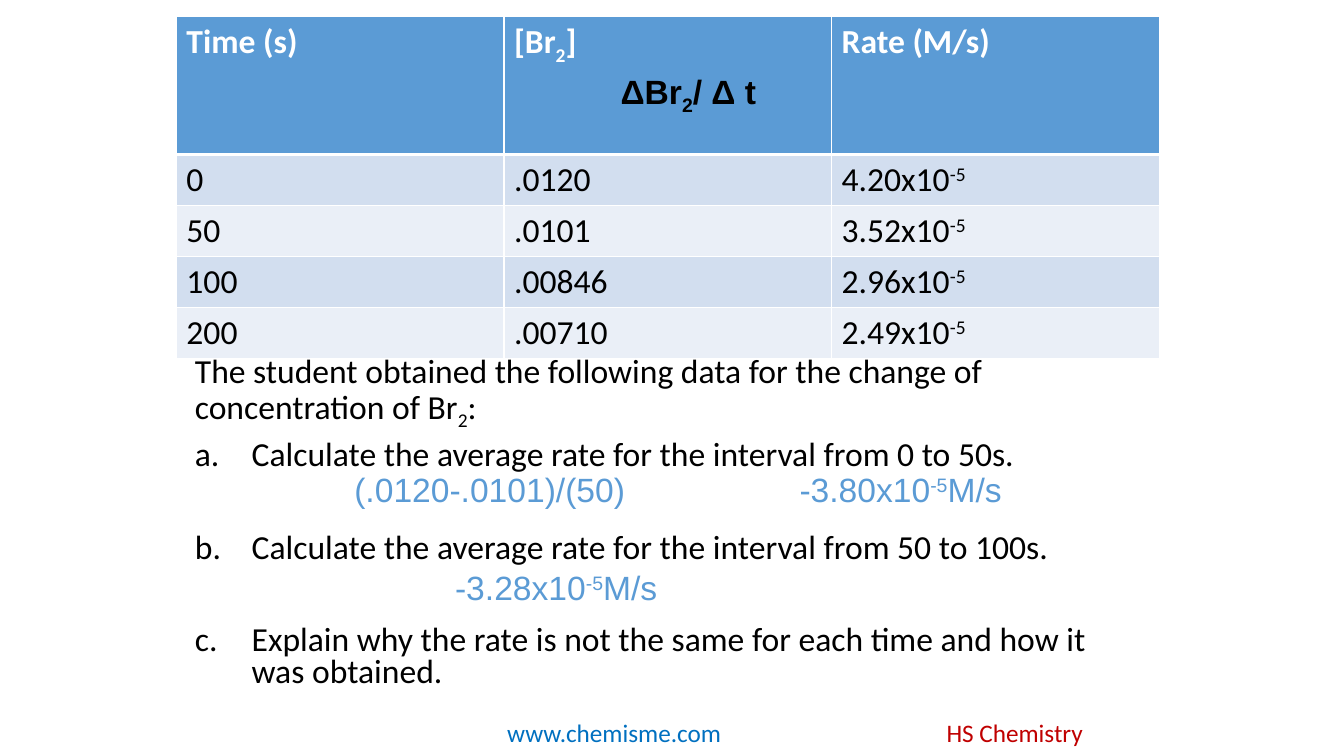
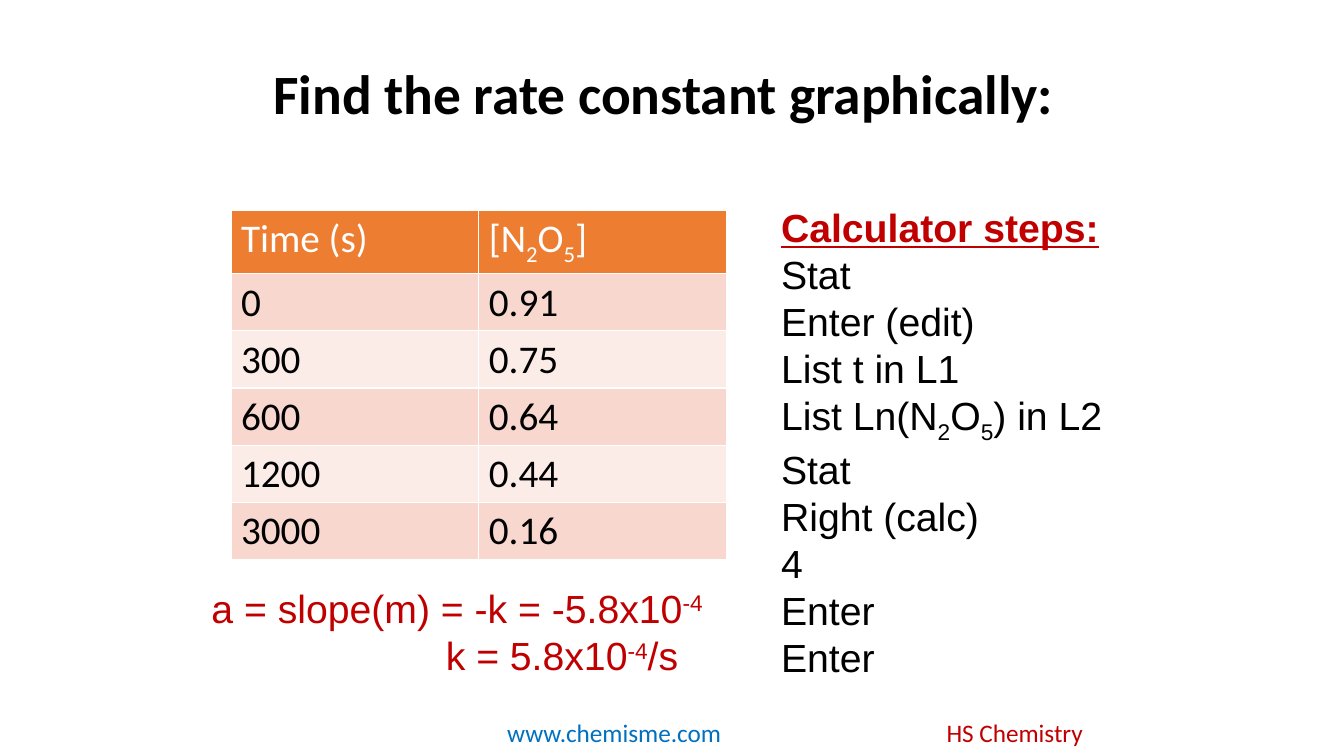
from lxml.etree import SubElement
from pptx import Presentation
from pptx.dml.color import RGBColor
from pptx.enum.text import MSO_ANCHOR as Anchor, MSO_AUTO_SIZE as AutoSize, PP_ALIGN as Align
from pptx.oxml.ns import qn
from pptx.util import Inches, Pt

# The slide is a grid of 160 columns by 90 rows
UNIT = Inches(13.333) / 160
COLUMNS, ROWS = 160, 90

BLACK, WHITE, RED, LINK_BLUE = "000000", "FFFFFF", "C00000", "0070C0"
BLUE, BLUE_BANDS = "5B9BD5", ("D2DEEF", "EAEFF7")
ORANGE, ORANGE_BANDS = "ED7D31", ("F8D7CE", "FCECE8")

# Font formats
FOOTER = {"name": "Calibri", "size": Pt(18)}
TITLE = {"name": "Calibri", "size": Pt(39.6), "bold": True}
BODY = {"name": "Calibri", "size": Pt(24), "bold": False}
LARGE_BODY = BODY | {"size": Pt(28)}
ANSWER = {"name": "Arial", "size": Pt(24)}
STEP = {"name": "Arial", "size": Pt(28)}
STEP_HEADING = STEP | {"bold": True, "underline": True}


def grid(*units):
    return [round(unit * UNIT) for unit in units]


def rgb(value):
    return RGBColor.from_string(value)


def set_values(target, values):
    for name, value in values.items():
        setattr(target, name, value)


def place(shape, area):
    set_values(shape, dict(zip(("left", "top", "width", "height"), grid(*area))))


def write(paragraph, text, font_format, color=BLACK):
    """Every second part between bars is a script: raised if signed, else lowered."""
    for index, part in enumerate(text.split("|")):
        if not part:
            continue
        run = paragraph.add_run()
        run.text = part
        set_values(run.font, font_format)
        run.font.color.rgb = rgb(color)
        if index % 2:
            baseline = "30000" if part.startswith("-") else "-25000"
            run._r.get_or_add_rPr().set("baseline", baseline)


def next_paragraph(frame, index):
    return frame.paragraphs[0] if index == 0 else frame.add_paragraph()


def indent(paragraph, left, first=0):
    properties = paragraph._p.get_or_add_pPr()
    for name, length in zip(("marL", "indent"), grid(left, first)):
        properties.set(name, str(length))
    return properties


def add_text(slide, area, lines, font_format, color=BLACK):
    frame = slide.shapes.add_textbox(*grid(*area)).text_frame
    set_values(frame, {"word_wrap": True, "auto_size": AutoSize.SHAPE_TO_FIT_TEXT})
    for index, line in enumerate(lines):
        write(next_paragraph(frame, index), line, font_format, color)
    return frame


def add_footer(slide):
    for left, text, color in ((59.2, "www.chemisme.com", LINK_BLUE),
                              (111.5, "HS Chemistry", RED)):
        add_text(slide, (left, ROWS - 5.2, 28.9, 4.8), [text], FOOTER, color)


def add_title(slide, text):
    title = slide.shapes.title
    place(title, (27, 4, 104, 15))
    frame = title.text_frame
    set_values(frame, {"vertical_anchor": Anchor.MIDDLE, "auto_size": AutoSize.NONE})
    paragraph = frame.paragraphs[0]
    set_values(paragraph, {"alignment": Align.CENTER, "line_spacing": 0.9})
    write(paragraph, text, TITLE)


def add_questions(placeholder, area, intro, questions):
    place(placeholder, area)
    frame = placeholder.text_frame
    frame.auto_size = AutoSize.NONE
    for index, text in enumerate([intro, *questions]):
        paragraph = next_paragraph(frame, index)
        # Later questions leave room for the answer above them
        space = (0, 10)[index] if index < 2 else 43
        set_values(paragraph, {"line_spacing": 0.8, "space_before": Pt(space)})
        if index == 0:
            SubElement(indent(paragraph, 0), qn("a:buNone"))
        else:
            properties = indent(paragraph, 6.75, -6.75)
            SubElement(properties, qn("a:buFont"), typeface="Calibri")
            SubElement(properties, qn("a:buAutoNum"), type="alphaLcPeriod")
        write(paragraph, text, BODY)


def add_bottom_border(cell, color, width):
    properties = cell._tc.get_or_add_tcPr()
    line = SubElement(properties, qn("a:lnB"), w=str(Pt(width)))
    SubElement(SubElement(line, qn("a:solidFill")), qn("a:srgbClr"), val=color)
    # Borders come before the cell fill
    properties.insert(0, line)


def add_data_table(slide, area, rows, row_heights, font_format, header_fill, bands,
                   strong_header):
    table = slide.shapes.add_table(len(rows), len(rows[0]), *grid(*area)).table
    for column in table.columns:
        column.width = grid(area[2] / len(rows[0]))[0]
    for index, (texts, height) in enumerate(zip(rows, row_heights)):
        table.rows[index].height = grid(height)[0]
        is_header = index == 0
        fill = header_fill if is_header else bands[(index - 1) % 2]
        values = font_format | {"bold": is_header and strong_header}
        for cell, text in zip(table.rows[index].cells, texts):
            cell.fill.solid()
            cell.fill.fore_color.rgb = rgb(fill)
            if is_header and strong_header:
                add_bottom_border(cell, WHITE, 3)
            write(cell.text_frame.paragraphs[0], text, values,
                  WHITE if is_header else BLACK)


def build_average_rates(presentation):
    slide = presentation.slides.add_slide(presentation.slide_layouts[1])
    title = slide.shapes.title
    title._element.getparent().remove(title._element)
    add_footer(slide)
    add_questions(
        slide.placeholders[1], (22, 42, 112, 42),
        "The student obtained the following data for the change of "
        "concentration of Br|2|:",
        ["Calculate the average rate for the interval from 0 to 50s.",
         "Calculate the average rate for the interval from 50 to 100s.",
         "Explain why the rate is not the same for each time and how it was obtained."])
    rows = [("Time (s)", "[Br|2|]", "Rate (M/s)"),
            ("0", ".0120", "4.20x10|-5"),
            ("50", ".0101", "3.52x10|-5"),
            ("100", ".00846", "2.96x10|-5"),
            ("200", ".00710", "2.49x10|-5")]
    add_data_table(slide, (21, 2, 117, 40.7), rows, [16.4] + [6.07] * 4, BODY,
                   BLUE, BLUE_BANDS, strong_header=True)
    # Answers and the rate formula
    for area, text in (((94, 55.2, 37, 6.1), "-3.80x10|-5|M/s"),
                       ((53, 66.9, 35, 6.1), "-3.28x10|-5|M/s"),
                       ((41, 55.2, 37, 6.1), "(.0120-.0101)/(50)")):
        add_text(slide, area, [text], ANSWER, BLUE)
    add_text(slide, (72.7, 7.8, 19, 6), ["ΔBr|2|/ Δ t"], ANSWER | {"bold": True})


def build_rate_constant(presentation):
    slide = presentation.slides.add_slide(presentation.slide_layouts[5])
    add_footer(slide)
    rows = [("Time (s)", "[N|2|O|5|]"), ("0", "0.91"), ("300", "0.75"),
            ("600", "0.64"), ("1200", "0.44"), ("3000", "0.16")]
    add_data_table(slide, (27.5, 25, 59, 40.8), rows, [6.8] * 6, LARGE_BODY,
                   ORANGE, ORANGE_BANDS, strong_header=False)
    add_title(slide, "Find the rate constant graphically:")
    # Calculator steps under their heading
    steps = add_text(slide, (91.8, 23.6, 43, 57.7), ["Calculator steps:"],
                     STEP_HEADING, RED)
    for step in ("Stat", "Enter (edit)", "List t in L1", "List Ln(N|2|O|5|) in L2",
                 "Stat", "Right (calc)", "4", "Enter", "Enter"):
        write(steps.add_paragraph(), step, STEP)
    # Slope and rate constant
    result = add_text(slide, (24, 69, 66, 12.5),
                      ["a = slope(m) = -k = -5.8x10|-4", "k = 5.8x10|-4|/s"], STEP, RED)
    indent(result.paragraphs[1], 27.9)


def main():
    presentation = Presentation()
    presentation.slide_width, presentation.slide_height = grid(COLUMNS, ROWS)
    build_average_rates(presentation)
    build_rate_constant(presentation)
    presentation.save("out.pptx")


if __name__ == "__main__":
    main()
